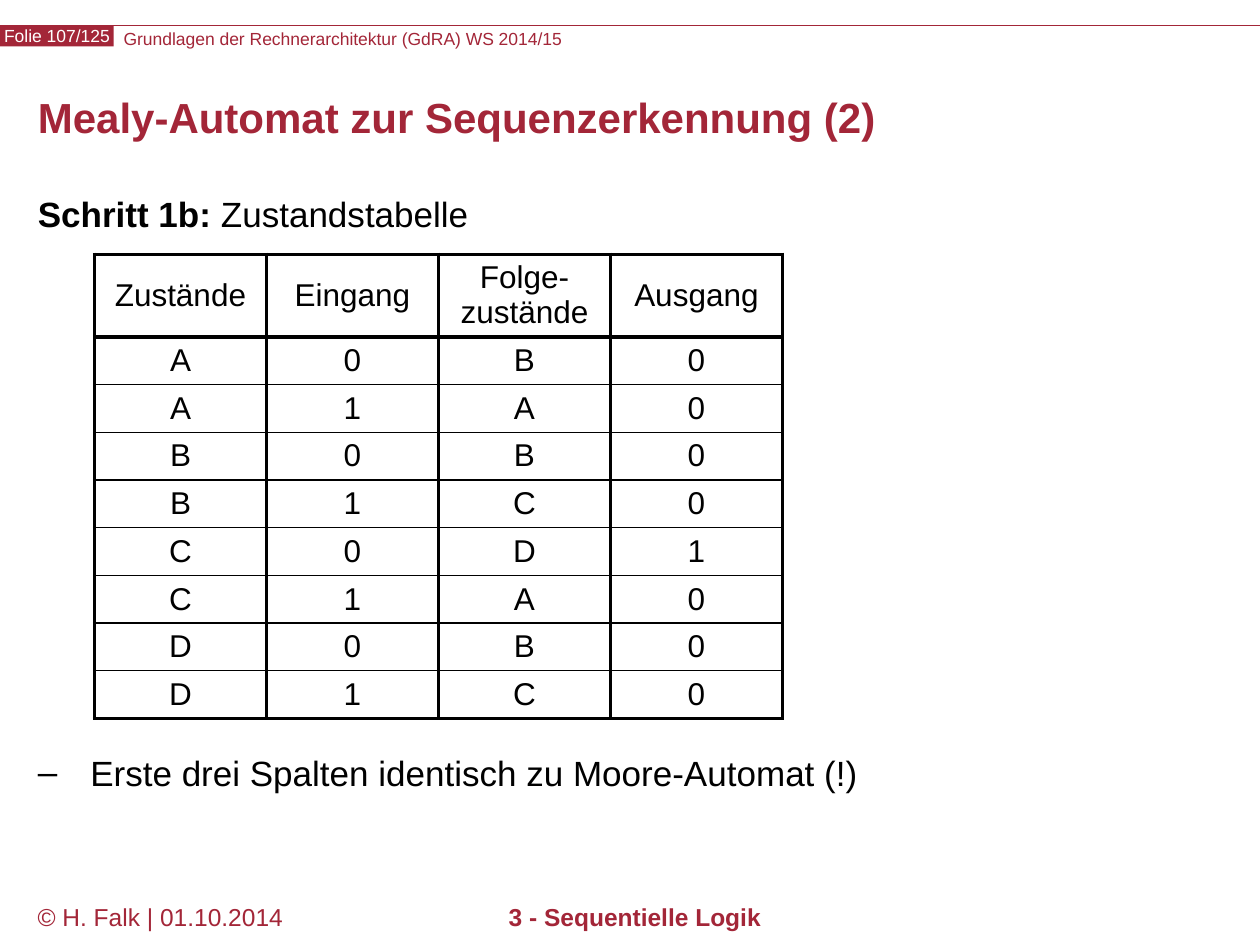
from lxml.etree import SubElement
from pptx import Presentation
from pptx.dml.color import RGBColor
from pptx.enum.shapes import MSO_CONNECTOR as Connector, MSO_SHAPE as Shape
from pptx.enum.text import MSO_ANCHOR as Anchor, MSO_AUTO_SIZE as AutoSize, PP_ALIGN as Align
from pptx.oxml import parse_xml
from pptx.oxml.ns import nsdecls, qn
from pptx.util import Pt

CRIMSON, BLACK, WHITE = "A32638", "000000", "FFFFFF"
THICK, THIN = 2.25, 1
NO_MARGINS = dict.fromkeys(("margin_left", "margin_top", "margin_right", "margin_bottom"), 0)
HEADINGS = ["Zustände", "Eingang", "Folge-zustände", "Ausgang"]
TRANSITIONS = ["A0B0", "A1A0", "B0B0", "B1C0", "C0D1", "C1A0", "D0B0", "D1C0"]


def colour(hex_value):
    return RGBColor.from_string(hex_value)


def apply(target, values):
    for name, value in values.items():
        setattr(target, name, value)


def add_run(paragraph, text, size, hex_value, bold=False):
    run = paragraph.add_run()
    run.text = text
    apply(run.font, {"name": "Arial", "size": Pt(size), "bold": bold})
    run.font.color.rgb = colour(hex_value)


def place(part, left, top, width, height):
    apply(part, {"left": Pt(left), "top": Pt(top), "width": Pt(width), "height": Pt(height)})


def add_label(slide, box, text, size, hex_value, bold=False, align=Align.LEFT, frame=None):
    label = slide.shapes.add_textbox(*map(Pt, box))
    apply(label.text_frame, {"word_wrap": True, **(frame or {})})
    paragraph = label.text_frame.paragraphs[0]
    paragraph.alignment = align
    add_run(paragraph, text, size, hex_value, bold)


def add_header(slide):
    rule = slide.shapes.add_connector(Connector.STRAIGHT, 0, Pt(14.4), Pt(720), Pt(14.4))
    rule.line.color.rgb = colour(CRIMSON)
    rule.line.width = Pt(0.75)
    SubElement(rule._element.spPr, qn("a:effectLst"))
    add_label(slide, (70.6, 15.8, 475, 12.2), "Grundlagen der Rechnerarchitektur (GdRA) WS 2014/15",
              10, CRIMSON, frame=NO_MARGINS)
    page_tag = slide.shapes.add_shape(Shape.RECTANGLE, 0, Pt(14.4), Pt(65), Pt(12.2))
    page_tag.shadow.inherit = False
    page_tag.fill.solid()
    page_tag.fill.fore_color.rgb = colour(CRIMSON)
    page_tag.line.fill.background()
    apply(page_tag.text_frame, {**NO_MARGINS, "word_wrap": False, "vertical_anchor": Anchor.MIDDLE})
    page_number = page_tag.text_frame.paragraphs[0]
    page_number.alignment = Align.CENTER
    add_run(page_number, "Folie 107/125", 10, WHITE)


def add_footer(slide):
    add_label(slide, (14.4, 512, 158.4, 28), "© H. Falk | 01.10.2014", 14, CRIMSON)
    add_label(slide, (144.7, 512, 436.3, 28), "3 - Sequentielle Logik", 14, CRIMSON,
              bold=True, align=Align.CENTER)


def fill_title(slide):
    title = slide.shapes.title
    place(title, 14.4, 43.2, 692, 51.8)
    apply(title.text_frame, {"vertical_anchor": Anchor.MIDDLE, "auto_size": AutoSize.NONE})
    heading = title.text_frame.paragraphs[0]
    apply(heading, {"alignment": Align.LEFT, "line_spacing": Pt(24)})
    add_run(heading, "Mealy-Automat zur Sequenzerkennung (2)", 24, CRIMSON, True)


def set_bullet(paragraph, indent, character=None):
    properties = paragraph._p.get_or_add_pPr()
    properties.set("marL", str(Pt(indent)))
    properties.set("indent", str(-Pt(indent)))
    if character:
        SubElement(properties, qn("a:buChar"), char=character)
    else:
        SubElement(properties, qn("a:buNone"))


def fill_body(slide):
    body = slide.placeholders[1]
    place(body, 14.4, 109.4, 692, 393)
    body.text_frame.auto_size = AutoSize.NONE
    step = body.text_frame.paragraphs[0]
    set_bullet(step, 27)
    apply(step, {"line_spacing": 0.9, "space_before": Pt(0)})
    add_run(step, "Schritt 1b:", 20, BLACK, True)
    add_run(step, " Zustandstabelle", 20, BLACK)
    remark = body.text_frame.add_paragraph()
    set_bullet(remark, 30, "–")
    apply(remark, {"line_spacing": 1.2, "space_before": Pt(290)})
    add_run(remark, "Erste drei Spalten identisch zu Moore-Automat (!)", 20, BLACK)


def set_borders(cell, **widths):
    properties = cell._tc.get_or_add_tcPr()
    for position, (side, width) in enumerate(widths.items()):
        properties.insert(position, parse_xml(
            f'<a:ln{side} {nsdecls("a")} w="{Pt(width)}"><a:solidFill>'
            f'<a:srgbClr val="{BLACK}"/></a:solidFill></a:ln{side}>'))


def add_state_table(slide):
    rows = [HEADINGS, *TRANSITIONS]
    last = len(rows) - 1
    table = slide.shapes.add_table(len(rows), len(HEADINGS), Pt(54), Pt(145.3),
                                   Pt(393.2), Pt(264.8)).table
    apply(table, {"first_row": False, "horz_banding": False})
    for column in table.columns:
        column.width = Pt(98.3)
    for index, values in enumerate(rows):
        table.rows[index].height = Pt(27.2 if index else 47.2)
        for cell, value in zip(table.rows[index].cells, values):
            cell.fill.background()
            cell.vertical_anchor = Anchor.MIDDLE
            set_borders(cell, L=THICK, R=THICK, T=THICK if index < 2 else THIN,
                        B=THICK if index in (0, last) else THIN)
            entry = cell.text_frame.paragraphs[0]
            apply(entry, {"alignment": Align.CENTER, "line_spacing": Pt(20)})
            add_run(entry, value, 18, BLACK)


def main():
    presentation = Presentation()
    apply(presentation, {"slide_width": Pt(720), "slide_height": Pt(540)})
    slide = presentation.slides.add_slide(presentation.slide_layouts[1])
    add_header(slide)
    add_footer(slide)
    fill_title(slide)
    fill_body(slide)
    add_state_table(slide)
    presentation.save("out.pptx")


if __name__ == "__main__":
    main()
